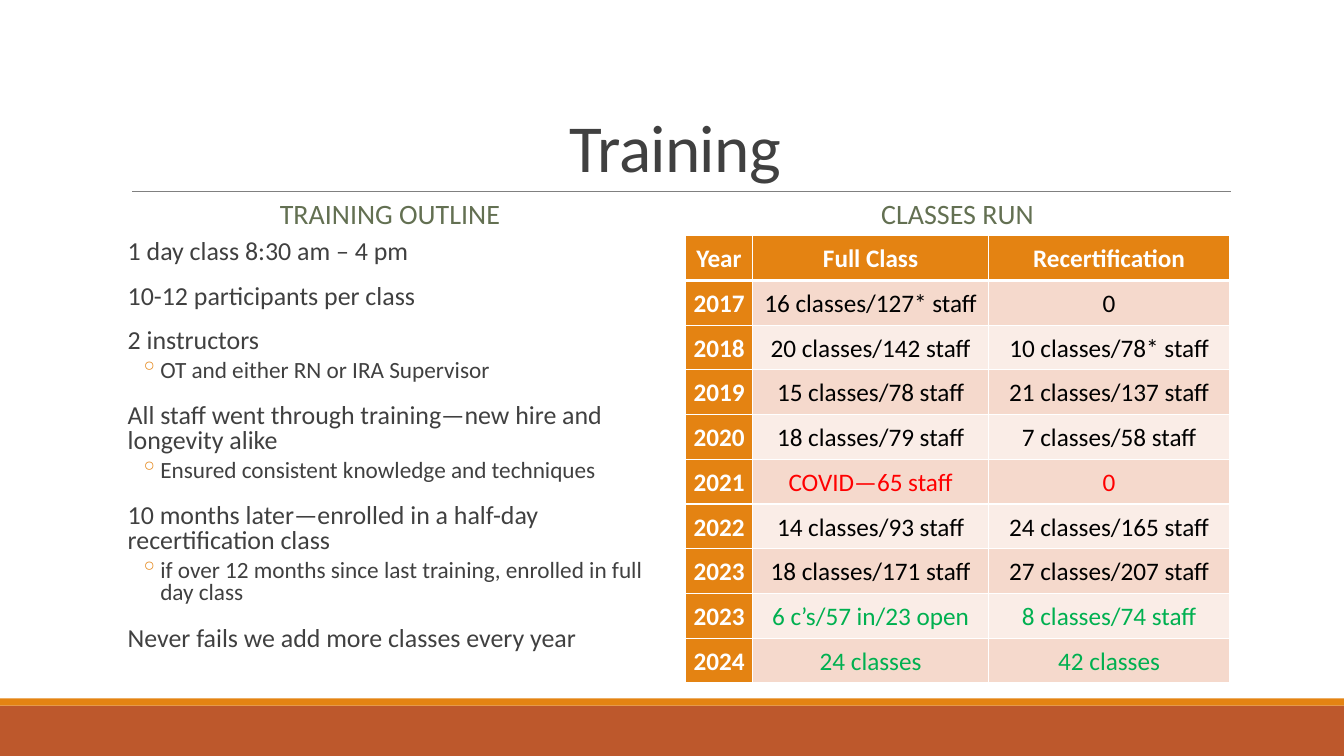
from lxml import etree
from pptx import Presentation
from pptx.dml.color import RGBColor
from pptx.enum.shapes import MSO_CONNECTOR, MSO_SHAPE
from pptx.enum.text import MSO_ANCHOR, PP_ALIGN
from pptx.oxml.ns import qn
from pptx.util import Cm, Pt

LEFT, CENTER = PP_ALIGN.LEFT, PP_ALIGN.CENTER
TOP, MIDDLE, BOTTOM = MSO_ANCHOR.TOP, MSO_ANCHOR.MIDDLE, MSO_ANCHOR.BOTTOM
RECTANGLE, STRAIGHT = MSO_SHAPE.RECTANGLE, MSO_CONNECTOR.STRAIGHT

WHITE = RGBColor(0xFF, 0xFF, 0xFF)
BLACK = RGBColor(0x00, 0x00, 0x00)
CHARCOAL = RGBColor(0x40, 0x40, 0x40)
GRAY = RGBColor(0x80, 0x80, 0x80)
OLIVE = RGBColor(0x63, 0x70, 0x52)
ORANGE = RGBColor(0xE4, 0x83, 0x12)
RUST = RGBColor(0xBD, 0x58, 0x2C)
DARK_BAND = RGBColor(0xF5, 0xD9, 0xCC)
LIGHT_BAND = RGBColor(0xFA, 0xED, 0xE7)
RED = RGBColor(0xFF, 0x00, 0x00)
GREEN = RGBColor(0x00, 0xB0, 0x50)

FONT = "Calibri"
SLIDE_WIDTH, SLIDE_HEIGHT = 33.87, 19.05
COLUMN_WIDTH = 13.72
OUTLINE_LEFT, CLASSES_LEFT = 2.97, 17.27

# (level, text)
OUTLINE = [
    (0, "1 day class 8:30 am – 4 pm"),
    (0, "10-12 participants per class"),
    (0, "2 instructors"),
    (1, "OT and either RN or IRA Supervisor"),
    (0, "All staff went through training—new hire and longevity alike"),
    (1, "Ensured consistent knowledge and techniques"),
    (0, "10 months later—enrolled in a half-day recertification class"),
    (1, "if over 12 months since last training, enrolled in full day class"),
    (0, "Never fails we add more classes every year"),
]

CLASS_HEADER = ("Year", "Full Class", "Recertification")
# (year, full class, recertification, text colour)
CLASSES = [
    ("2017", "16 classes/127* staff", "0", BLACK),
    ("2018", "20 classes/142 staff", "10 classes/78* staff", BLACK),
    ("2019", "15 classes/78 staff", "21 classes/137 staff", BLACK),
    ("2020", "18 classes/79 staff", "7 classes/58 staff", BLACK),
    ("2021", "COVID—65 staff", "0", RED),
    ("2022", "14 classes/93 staff", "24 classes/165 staff", BLACK),
    ("2023", "18 classes/171 staff", "27 classes/207 staff", BLACK),
    ("2023", "6 c’s/57 in/23 open", "8 classes/74 staff", GREEN),
    ("2024", "24 classes", "42 classes", GREEN),
]


def write(paragraph, text, size, color, bold=False, align=LEFT, line=1.0,
          before=0, after=0, tracking=None):
    paragraph.alignment = align
    paragraph.line_spacing = line
    paragraph.space_before = Pt(before)
    paragraph.space_after = Pt(after)
    run = paragraph.add_run()
    run.text = text
    run.font.name = FONT
    run.font.size = Pt(size)
    run.font.bold = bold
    run.font.color.rgb = color
    if tracking:
        run.font._element.set("spc", str(int(tracking * 100)))


def add_frame(slide, left, top, width, height, anchor, side=0.25):
    box = slide.shapes.add_textbox(Cm(left), Cm(top), Cm(width), Cm(height))
    frame = box.text_frame
    frame.word_wrap = True
    frame.vertical_anchor = anchor
    frame.margin_left = frame.margin_right = Cm(side)
    return frame


def set_indent(paragraph, left, hanging=0, bullet=None):
    properties = paragraph._p.get_or_add_pPr()
    properties.set("marL", str(Cm(left)))
    properties.set("indent", str(-Cm(hanging)))
    if bullet:
        color = etree.SubElement(properties, qn("a:buClr"))
        etree.SubElement(color, qn("a:srgbClr"), val=str(ORANGE))
        etree.SubElement(properties, qn("a:buChar"), char=bullet)


def set_borders(cell, top=1, bottom=1):
    properties = cell._tc.get_or_add_tcPr()
    widths = {"a:lnL": 1, "a:lnR": 1, "a:lnT": top, "a:lnB": bottom}
    for position, (side, width) in enumerate(widths.items()):
        border = etree.Element(qn(side), w=str(Pt(width)))
        fill = etree.SubElement(border, qn("a:solidFill"))
        etree.SubElement(fill, qn("a:srgbClr"), val=str(WHITE))
        properties.insert(position, border)


def add_footer_bands(slide, left, top, width, height):
    stripe = 0.18
    for band_top, band_height, color in (
            (top + stripe, height - stripe, RUST), (top, stripe, ORANGE)):
        band = slide.shapes.add_shape(
            RECTANGLE, Cm(left), Cm(band_top), Cm(width), Cm(band_height))
        band.shadow.inherit = False
        band.fill.solid()
        band.fill.fore_color.rgb = color
        band.line.fill.background()


def add_title(slide, left, top, width, height):
    bottom = Cm(top + height)
    rule = slide.shapes.add_connector(
        STRAIGHT, Cm(left + 0.28), bottom, Cm(left + width + 0.03), bottom)
    rule.line.color.rgb = GRAY
    rule.line.width = Pt(0.5)
    etree.SubElement(rule._element.spPr, qn("a:effectLst"))
    frame = add_frame(slide, left, top, width, height, BOTTOM)
    write(frame.paragraphs[0], "Training", 48, CHARCOAL, align=CENTER,
          line=0.85, tracking=-0.5)


def add_heading(slide, text, left, top, width, height):
    frame = add_frame(slide, left, top, width, height, MIDDLE)
    write(frame.paragraphs[0], text, 20, OLIVE, align=CENTER, line=0.9,
          before=12, after=2)


def add_outline(slide, left, top, width, height):
    frame = add_frame(slide, left, top, width, height, TOP, side=0)
    for index, (level, text) in enumerate(OUTLINE):
        item = frame.add_paragraph() if index else frame.paragraphs[0]
        if level:
            item.level = level
            write(item, text, 16.6, CHARCOAL, line=0.8, before=2, after=4)
            set_indent(item, 1.07, 0.51, "◦")
        else:
            write(item, text, 18.5, CHARCOAL, line=0.8, before=12, after=2)
            set_indent(item, 0.25)


def add_classes_table(slide, left, top, width, height):
    rows = [(*CLASS_HEADER, WHITE), *CLASSES]
    table = slide.shapes.add_table(
        len(rows), len(CLASS_HEADER),
        Cm(left), Cm(top), Cm(width), Cm(height)).table
    year_width, full_width = 1.7, 5.94
    widths = (year_width, full_width, width - year_width - full_width)
    for column, column_width in zip(table.columns, widths):
        column.width = Cm(column_width)
    for r, (*texts, color) in enumerate(rows):
        table.rows[r].height = Cm(height / len(rows))
        band = DARK_BAND if r % 2 else LIGHT_BAND
        for c, text in enumerate(texts):
            cell = table.cell(r, c)
            label = r == 0 or c == 0
            cell.fill.solid()
            cell.fill.fore_color.rgb = ORANGE if label else band
            cell.vertical_anchor = MIDDLE
            cell.margin_left = cell.margin_right = Cm(0.15)
            cell.margin_top = cell.margin_bottom = 0
            set_borders(cell, top=3 if r == 1 else 1, bottom=3 if r == 0 else 1)
            write(cell.text_frame.paragraphs[0], text, 18,
                  WHITE if label else color, bold=label, align=CENTER,
                  line=1.07)


def main():
    deck = Presentation()
    deck.slide_width, deck.slide_height = Cm(SLIDE_WIDTH), Cm(SLIDE_HEIGHT)
    slide = deck.slides.add_slide(deck.slide_layouts[6])
    add_footer_bands(slide, 0, 17.6, SLIDE_WIDTH, 1.45)
    add_title(slide, 3.05, 0.79, 27.94, 4.04)
    # Left column
    add_heading(slide, "TRAINING OUTLINE", OUTLINE_LEFT, 4.39, COLUMN_WIDTH, 2.06)
    add_outline(slide, OUTLINE_LEFT, 5.94, COLUMN_WIDTH, 11.15)
    # Right column
    add_heading(slide, "CLASSES RUN", CLASSES_LEFT, 4.39, COLUMN_WIDTH, 2.06)
    add_classes_table(slide, CLASSES_LEFT, 5.94, COLUMN_WIDTH, 11.28)
    deck.save("out.pptx")


if __name__ == "__main__":
    main()
